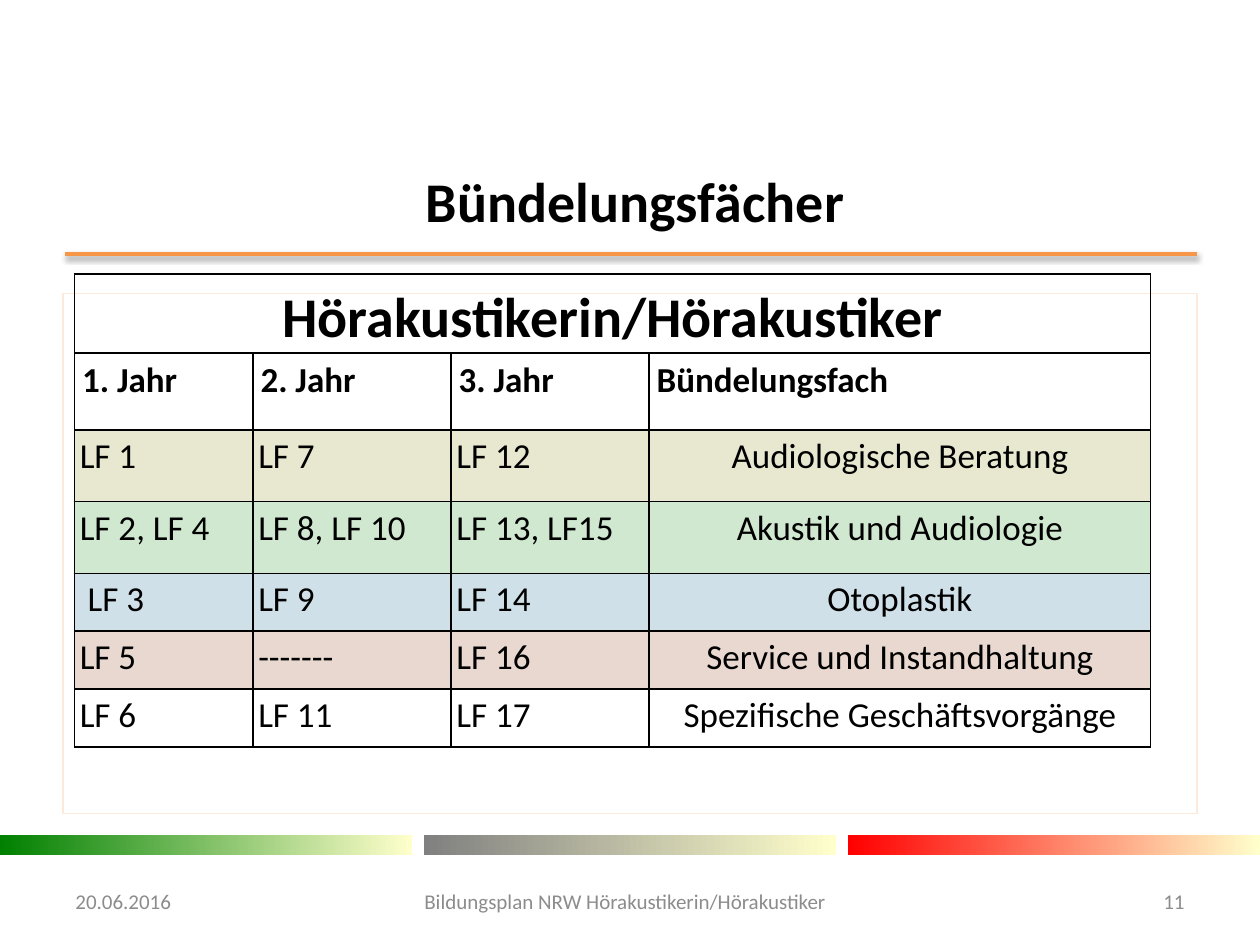
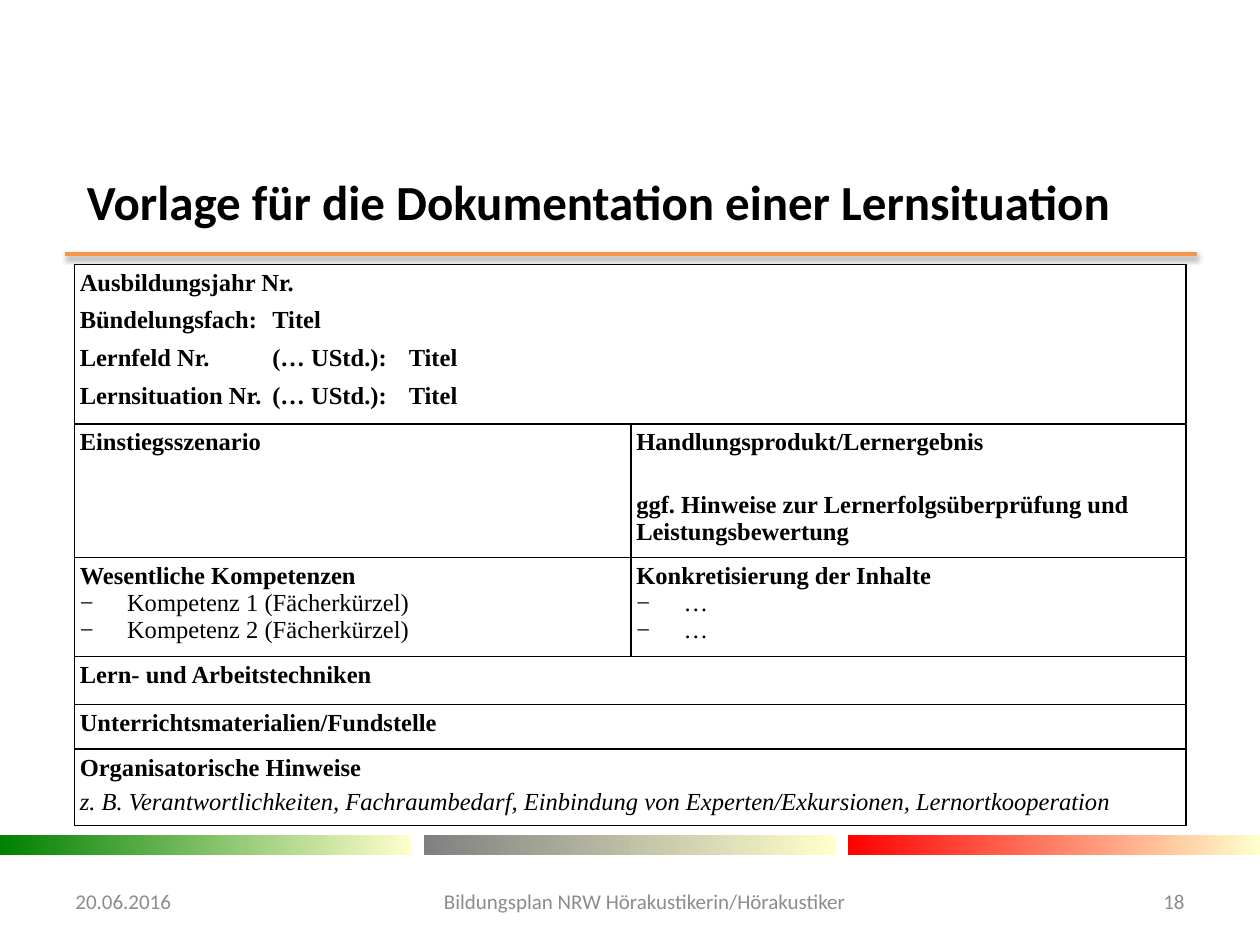
from lxml import etree
from pptx import Presentation
from pptx.dml.color import RGBColor
from pptx.enum.shapes import MSO_CONNECTOR, MSO_SHAPE
from pptx.enum.text import MSO_ANCHOR, MSO_AUTO_SIZE, PP_ALIGN
from pptx.oxml.ns import qn
from pptx.util import Pt

BLACK = RGBColor(0x00, 0x00, 0x00)
GREY = RGBColor(0x8C, 0x8C, 0x8C)
ORANGE = RGBColor(0xF7, 0x96, 0x46)
PEACH = RGBColor(0xFD, 0xEA, 0xDA)
CREAM = RGBColor(0xFF, 0xFF, 0xCC)
BAND_COLORS = [
    RGBColor(0x00, 0x80, 0x00),
    RGBColor(0x80, 0x80, 0x80),
    RGBColor(0xFF, 0x00, 0x00),
]
OLIVE = RGBColor(0xE8, 0xE8, 0xD0)
GREEN = RGBColor(0xD0, 0xE8, 0xD0)
BLUE = RGBColor(0xD0, 0xE0, 0xE8)
ROSE = RGBColor(0xE8, 0xD8, 0xD0)

SANS = "Calibri"
SERIF = "Times New Roman"
DATE = "20.06.2016"
FOOTER = "Bildungsplan NRW Hörakustikerin/Hörakustiker"

SUBJECT_HEADS = ["1. Jahr", "2. Jahr", "3. Jahr", "Bündelungsfach"]
SUBJECTS = [
    (OLIVE, ["LF 1", "LF 7", "LF 12", "Audiologische Beratung"]),
    (GREEN, ["LF 2, LF 4", "LF 8, LF 10", "LF 13, LF15", "Akustik und Audiologie"]),
    (BLUE, ["LF 3", "LF 9", "LF 14", "Otoplastik"]),
    (ROSE, ["LF 5", "-------", "LF 16", "Service und Instandhaltung"]),
    (None, ["LF 6", "LF 11", "LF 17", "Spezifische Geschäftsvorgänge"]),
]

HEAD, FIELD, RESULT, BULLET, NOTE = "head", "field", "result", "bullet", "note"
SPACE_BEFORE = {HEAD: 0, FIELD: 6, RESULT: 20, BULLET: 0, NOTE: 4}
TEMPLATE = [
    [[("Ausbildungsjahr Nr.", FIELD), ("Bündelungsfach:\tTitel", FIELD),
      ("Lernfeld Nr.\t(… UStd.):\tTitel", FIELD),
      ("Lernsituation Nr.\t(… UStd.):\tTitel", FIELD)]],
    [[("Einstiegsszenario", HEAD)],
     [("Handlungsprodukt/Lernergebnis", HEAD),
      ("ggf. Hinweise zur Lernerfolgsüberprüfung und Leistungsbewertung", RESULT)]],
    [[("Wesentliche Kompetenzen", HEAD), ("Kompetenz 1 (Fächerkürzel)", BULLET),
      ("Kompetenz 2 (Fächerkürzel)", BULLET)],
     [("Konkretisierung der Inhalte", HEAD), ("…", BULLET), ("…", BULLET)]],
    [[("Lern- und Arbeitstechniken", HEAD)]],
    [[("Unterrichtsmaterialien/Fundstelle", HEAD)]],
    [[("Organisatorische Hinweise", HEAD),
      ("z. B. Verantwortlichkeiten, Fachraumbedarf, Einbindung von "
       "Experten/Exkursionen, Lernortkooperation", NOTE)]],
]


def format_text(p, size, color=BLACK, font=SANS, bold=False, italic=False):
    """Format every run of a paragraph."""
    for r in p.runs:
        r.font.size = Pt(size)
        r.font.name = font
        r.font.color.rgb = color
        r.font.bold = bold
        r.font.italic = italic


def add_title(s, box, text, size, align, anchor):
    """Place and format the title placeholder."""
    sp = s.shapes.title
    sp.left, sp.top, sp.width, sp.height = map(Pt, box)
    tf = sp.text_frame
    tf.text = text
    tf.word_wrap = True
    tf.auto_size = MSO_AUTO_SIZE.NONE
    tf.vertical_anchor = anchor
    tf.paragraphs[0].alignment = align
    format_text(tf.paragraphs[0], size, bold=True)


def add_rule(s, x, y, width):
    """Draw the orange rule with its soft shadow."""
    line = s.shapes.add_connector(
        MSO_CONNECTOR.STRAIGHT, Pt(x), Pt(y), Pt(x + width), Pt(y))
    line.line.color.rgb = ORANGE
    line.line.width = Pt(2)
    effects = etree.SubElement(line._element.spPr, qn("a:effectLst"))
    shadow = etree.SubElement(
        effects, qn("a:outerShdw"), blurRad=str(Pt(3.1)), dist=str(Pt(1.6)),
        dir="5400000", rotWithShape="0")
    color = etree.SubElement(shadow, qn("a:srgbClr"), val=str(BLACK))
    etree.SubElement(color, qn("a:alpha"), val="38000")


def add_bands(s, box):
    """Spread the three fading bands evenly over the box."""
    x, y, width, height = box
    band_width = 235.5
    step = (width - band_width) / (len(BAND_COLORS) - 1)
    for i, color in enumerate(BAND_COLORS):
        sp = s.shapes.add_shape(
            MSO_SHAPE.RECTANGLE, Pt(x + i * step), Pt(y), Pt(band_width), Pt(height))
        sp.shadow.inherit = False
        sp.line.fill.background()
        sp.fill.gradient()
        sp.fill.gradient_angle = 0
        for stop, rgb in zip(sp.fill.gradient_stops, (color, CREAM)):
            stop.color.rgb = rgb


def add_footer(s, box, number, center_shift):
    """Write date, footer text and slide number into the box."""
    x, y, width, height = box
    parts = [
        (DATE, 0, 168, PP_ALIGN.LEFT),
        (FOOTER, center_shift, 414, PP_ALIGN.CENTER),
        (str(number), width - 168, 168, PP_ALIGN.RIGHT),
    ]
    for text, dx, part_width, align in parts:
        sp = s.shapes.add_textbox(Pt(x + dx), Pt(y), Pt(part_width), Pt(height))
        tf = sp.text_frame
        tf.word_wrap = True
        tf.vertical_anchor = MSO_ANCHOR.MIDDLE
        tf.text = text
        tf.paragraphs[0].alignment = align
        format_text(tf.paragraphs[0], 12, GREY)


def add_frame(s, box):
    """Draw the pale outline of the content area."""
    sp = s.shapes.add_shape(MSO_SHAPE.RECTANGLE, *map(Pt, box))
    sp.shadow.inherit = False
    sp.fill.background()
    sp.line.color.rgb = PEACH
    sp.line.width = Pt(0.75)


def add_grid(s, x, y, widths, heights):
    """Add an unfilled table with thin black borders."""
    table = s.shapes.add_table(
        len(heights), len(widths), Pt(x), Pt(y), Pt(sum(widths)), Pt(sum(heights))).table
    table.first_row = table.horz_banding = False
    for column, width in zip(table.columns, widths):
        column.width = Pt(width)
    for row, height in zip(table.rows, heights):
        row.height = Pt(height)
    for cell in table.iter_cells():
        tc_pr = cell._tc.get_or_add_tcPr()
        for side in ("lnL", "lnR", "lnT", "lnB"):
            ln = etree.SubElement(tc_pr, qn(f"a:{side}"), w=str(Pt(1)))
            fill = etree.SubElement(ln, qn("a:solidFill"))
            etree.SubElement(fill, qn("a:srgbClr"), val=str(BLACK))
        cell.fill.background()
        cell.margin_left = cell.margin_right = Pt(3)
        cell.margin_top = cell.margin_bottom = Pt(3)
    return table


def write_cell(cell, text, size=20, bold=False, align=PP_ALIGN.LEFT):
    """Write one line into a table cell."""
    cell.text = text
    p = cell.text_frame.paragraphs[0]
    p.alignment = align
    format_text(p, size, bold=bold)
    return p


def write_heading(cell, text, size=20, align=PP_ALIGN.LEFT):
    """Write a bold heading with the wider heading margins."""
    cell.margin_left = cell.margin_right = Pt(4.3)
    cell.margin_top = cell.margin_bottom = 0
    write_cell(cell, text, size, True, align).line_spacing = 1.15


def add_subject_table(s, x, y):
    """Fill the table of learning fields by year and subject."""
    table = add_grid(s, x, y, [102, 113.2, 113.2, 286.6],
                     [45.2, 43.8, 41, 41, 33.1, 33.1, 33.1])
    table.cell(0, 0).merge(table.cell(0, 3))
    write_heading(table.cell(0, 0), "Hörakustikerin/Hörakustiker", 32, PP_ALIGN.CENTER)
    for col, text in enumerate(SUBJECT_HEADS):
        write_heading(table.cell(1, col), text)
    for row, (color, texts) in enumerate(SUBJECTS, 2):
        for col, text in enumerate(texts):
            cell = table.cell(row, col)
            write_cell(cell, text, align=PP_ALIGN.CENTER if col == 3 else PP_ALIGN.LEFT)
            if color is not None:
                cell.fill.solid()
                cell.fill.fore_color.rgb = color
    table.cell(4, 0).margin_left = Pt(7.5)


def write_lines(cell, lines):
    """Write styled paragraphs into a cell of the template."""
    tf = cell.text_frame
    for i, (text, style) in enumerate(lines):
        p = tf.add_paragraph() if i else tf.paragraphs[0]
        p.text = text
        p_pr = p._p.get_or_add_pPr()
        if style == BULLET:
            p_pr.set("marL", str(Pt(27)))
            p_pr.set("indent", str(Pt(-27)))
            etree.SubElement(p_pr, qn("a:buFont"), typeface=SERIF)
            etree.SubElement(p_pr, qn("a:buChar"), char="−")
        if style == FIELD:
            tabs = etree.SubElement(p_pr, qn("a:tabLst"))
            for position in (110, 188):
                etree.SubElement(tabs, qn("a:tab"), pos=str(Pt(position)), algn="l")
        if i:
            p.space_before = Pt(SPACE_BEFORE[style])
        format_text(p, 14, font=SERIF, bold=style in (HEAD, FIELD, RESULT),
                    italic=style == NOTE)


def add_template_table(s, x, y):
    """Fill the form that documents a learning situation."""
    table = add_grid(s, x, y, [318, 317], [88.4, 74.6, 54.2, 27.4, 25.6, 41.6])
    for row, cells in enumerate(TEMPLATE):
        if len(cells) == 1:
            table.cell(row, 0).merge(table.cell(row, 1))
        for col, lines in enumerate(cells):
            write_lines(table.cell(row, col), lines)


def add_base(prs, number, center_shift):
    """Add a slide with rule, bands and footer."""
    s = prs.slides.add_slide(prs.slide_layouts[5])
    add_rule(s, 37.4, 145.2, 646.6)
    add_bands(s, (0, 477.2, 720, 11.5))
    add_footer(s, (36, 500.4, 648, 28.8), number, center_shift)
    return s


def add_subject_slide(prs):
    """Build the slide on bundled subjects."""
    s = add_base(prs, 11, 114.2)
    add_title(s, (42.5, 83, 641, 62.6), "Bündelungsfächer", 32,
              PP_ALIGN.CENTER, MSO_ANCHOR.MIDDLE)
    add_frame(s, (36, 167.6, 648, 297.2))
    add_subject_table(s, 42.6, 156.6)


def add_template_slide(prs):
    """Build the slide with the documentation form."""
    s = add_base(prs, 18, 125.4)
    add_title(s, (42.5, 94.5, 641, 63), "Vorlage für die Dokumentation einer Lernsituation",
              28, PP_ALIGN.LEFT, MSO_ANCHOR.TOP)
    add_template_table(s, 42.6, 151)


def main():
    """Build and save the presentation."""
    prs = Presentation()
    prs.slide_width, prs.slide_height = Pt(720), Pt(540)
    add_subject_slide(prs)
    add_template_slide(prs)
    prs.save("out.pptx")


if __name__ == "__main__":
    main()
